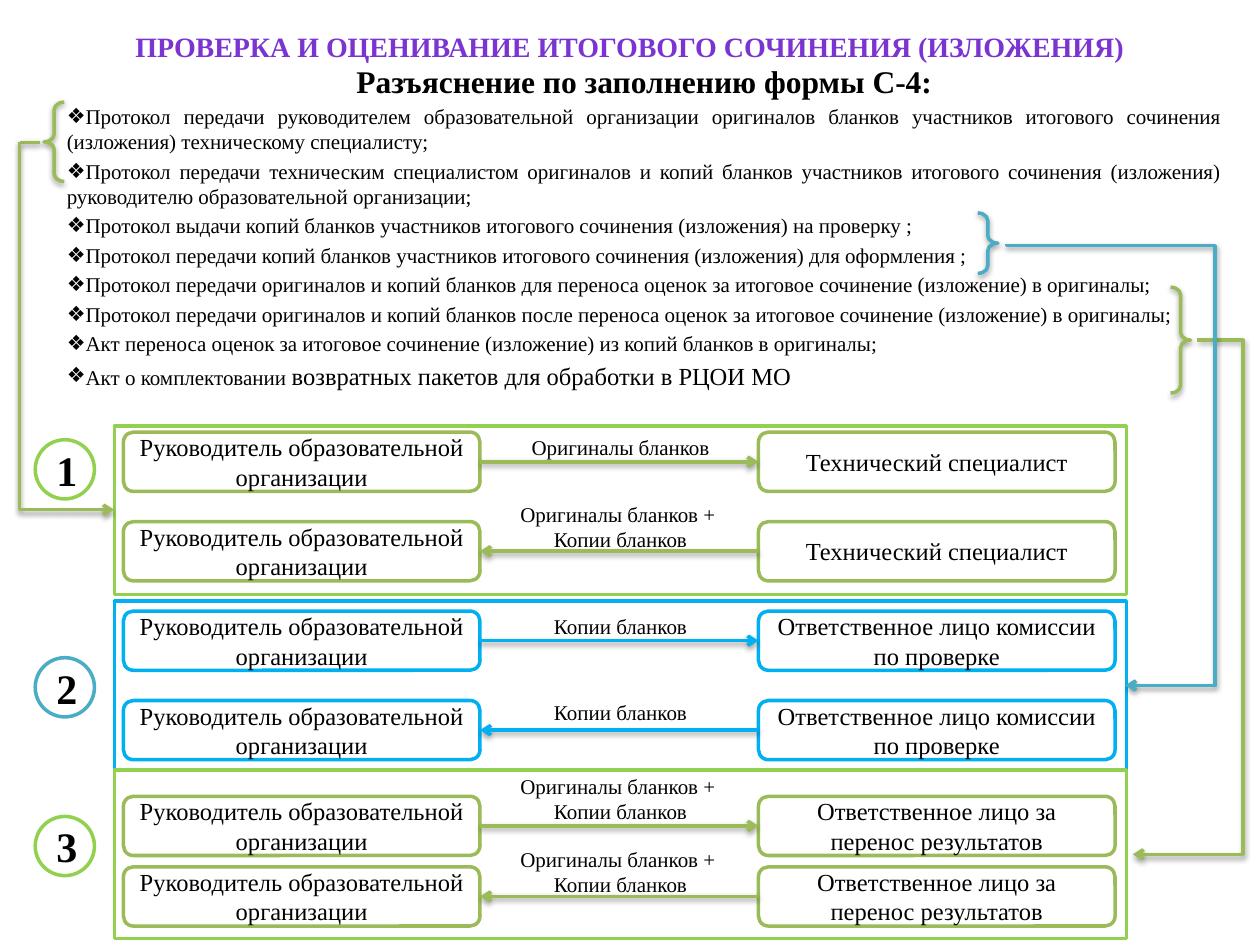
from lxml import etree
from pptx import Presentation
from pptx.dml.color import RGBColor
from pptx.enum.shapes import MSO_CONNECTOR, MSO_SHAPE
from pptx.enum.text import MSO_ANCHOR, MSO_AUTO_SIZE, PP_ALIGN
from pptx.oxml import parse_xml
from pptx.oxml.ns import nsdecls, qn
from pptx.util import Inches, Pt

ROUND, RECT, OVAL = MSO_SHAPE.ROUNDED_RECTANGLE, MSO_SHAPE.RECTANGLE, MSO_SHAPE.OVAL
BRACE = MSO_SHAPE.RIGHT_BRACE
LINE, ELBOW = MSO_CONNECTOR.STRAIGHT, MSO_CONNECTOR.ELBOW
CENTER, FULL = PP_ALIGN.CENTER, PP_ALIGN.JUSTIFY
MIDDLE, TOP = MSO_ANCHOR.MIDDLE, MSO_ANCHOR.TOP
FIXED = MSO_AUTO_SIZE.NONE
FONT = "Times New Roman"
HUES = {
    "black": "000000", "white": "FFFFFF", "title": "7B34D2", "olive": "9BBB59",
    "lime": "92D050", "sky": "00B0F0", "teal": "4BACC6",
}
RGB = {name: RGBColor.from_string(code) for name, code in HUES.items()}

deck = Presentation()
deck.slide_width, deck.slide_height = Inches(10), Inches(7.5)
CELL = deck.slide_width / 100
slide = deck.slides.add_slide(deck.slide_layouts[1])
shapes = slide.shapes


def at(*cells):
    return [round(n * CELL) for n in cells]


def ink(item, hue, cast=False, head=False):
    item.line.color.rgb = RGB[hue]
    item.line.width = Pt(2)
    props = item.element.spPr
    if head:
        etree.SubElement(props.find(qn("a:ln")), qn("a:tailEnd"), type="arrow")
    if cast:
        props.append(parse_xml(
            f'<a:effectLst {nsdecls("a")}><a:outerShdw blurRad="40000" dist="20000" '
            'dir="5400000" rotWithShape="0"><a:srgbClr val="000000">'
            '<a:alpha val="38000"/></a:srgbClr></a:outerShdw></a:effectLst>'))
    else:
        item.shadow.inherit = False


title = shapes.title
title.left, title.top, title.width, title.height = at(5, 0, 90, 6)
title.text_frame.text = "ПРОВЕРКА И ОЦЕНИВАНИЕ ИТОГОВОГО СОЧИНЕНИЯ (ИЗЛОЖЕНИЯ)"
title.text_frame.auto_size = FIXED
title.text_frame.vertical_anchor = MIDDLE
para = title.text_frame.paragraphs[0]
para.alignment, para.line_spacing = CENTER, 1.5
para.font.name, para.font.size, para.font.bold = FONT, Pt(16), True
para.font.color.rgb = RGB["title"]

body = slide.placeholders[1]
body.left, body.top, body.width, body.height = at(4.3, 4.4, 93.7, 24.2)
frame = body.text_frame
frame.text = "\n".join([
    "Разъяснение по заполнению формы С-4:",
    "Протокол передачи руководителем образовательной организации оригиналов бланков участников итогового сочинения (изложения) техническому специалисту;",
    "Протокол передачи техническим специалистом оригиналов и копий бланков участников итогового сочинения (изложения) руководителю образовательной организации;",
    "Протокол выдачи копий бланков участников итогового сочинения (изложения) на проверку ;",
    "Протокол передачи копий бланков участников итогового сочинения (изложения) для оформления ;",
    "Протокол передачи оригиналов и копий бланков для переноса оценок за итоговое сочинение (изложение) в оригиналы;",
    "Протокол передачи оригиналов и копий бланков после переноса оценок за итоговое сочинение (изложение) в оригиналы;",
    "Акт переноса оценок за итоговое сочинение (изложение) из копий бланков в оригиналы;",
    "Акт о комплектовании ",
])
frame.auto_size, frame.vertical_anchor = FIXED, TOP
for i, para in enumerate(frame.paragraphs):
    props = para._p.get_or_add_pPr()
    props.set("marL", "0")
    props.set("indent", "0")
    if i == 0:
        para.space_before = Pt(0)
        etree.SubElement(props, qn("a:buNone"))
    else:
        etree.SubElement(props, qn("a:buChar"), char="❖")
    para.alignment = FULL if i else CENTER
    para.font.name, para.font.size, para.font.bold = FONT, Pt(12 if i else 18), i == 0
    para.font.color.rgb = RGB["black"]
tail = frame.paragraphs[-1].add_run()
tail.text = "возвратных пакетов для обработки в РЦОИ МО"
tail.font.size = Pt(14)

HEAD = "Руководитель образовательной организации"
TECH = "Технический специалист"
CHECK = "Ответственное лицо комиссии по проверке"
MOVE = "Ответственное лицо за перенос результатов"
ORIG, COPY = "Оригиналы бланков", "Копии бланков"
BOTH = f"{ORIG} + \n{COPY}"
LEFT, RIGHT, WIDE, HIGH = 9.8, 60.2, 28.3, 4.7

panels = [
    (33.8, "lime", "olive", "lime", 34.9, TECH, [(34.3, 34, ORIG), (41.4, 39.3, BOTH)]),
    (47.7, "sky", "sky", "teal", 52.2, CHECK, [(48.5, 48.2, COPY), (55.6, 55, COPY)]),
    (61.1, "lime", "olive", "lime", 64.8, MOVE, [(63.2, 60.9, BOTH), (68.8, 66.7, BOTH)]),
]
texts = []
for num, (top, edge, hue, ring, spot, role, rows) in enumerate(panels, 1):
    panel = shapes.add_shape(RECT, *at(9.1, top, 80.3, 13.4))
    panel.fill.background()
    ink(panel, edge)
    badge = shapes.add_shape(OVAL, *at(2.8, spot, HIGH, HIGH))
    badge.fill.background()
    ink(badge, ring)
    texts.append((badge, str(num), 24, MIDDLE))
    for back, (y, high, note) in enumerate(rows):
        for x, name in ((LEFT, HEAD), (RIGHT, role)):
            box = shapes.add_shape(ROUND, *at(x, y, WIDE, HIGH))
            box.fill.solid()
            box.fill.fore_color.rgb = RGB["white"]
            ink(box, hue)
            texts.append((box, name, 14, MIDDLE))
        ends = [LEFT + WIDE, RIGHT]
        if back:
            ends.reverse()
        mid = y + HIGH / 2
        ink(shapes.add_connector(LINE, *at(ends[0], mid, ends[1], mid)), hue, True, True)
        label = shapes.add_textbox(*at(39.8, high, 18.9, 5 if note == BOTH else 3))
        texts.append((label, note, 12, TOP))

for item, words, size, anchor in texts:
    frame = item.text_frame
    frame.text, frame.word_wrap, frame.vertical_anchor = words, True, anchor
    for para in frame.paragraphs:
        para.alignment = CENTER
        para.font.name, para.font.size, para.font.bold = FONT, Pt(size), size == 24
        para.font.color.rgb = RGB["black"]

braces = [
    (3.5, 8.1, 6.3, 180, "olive"),
    (77.6, 16.9, 4.8, 0, "teal"),
    (92.9, 22.8, 8.4, 0, "olive"),
]
for x, y, high, turn, hue in braces:
    brace = shapes.add_shape(BRACE, *at(x, y, 1.6, high))
    brace.rotation = turn
    brace.adjustments[0], brace.adjustments[1] = 0.38, 0.5
    brace.fill.background()
    ink(brace, hue, True)

ink(shapes.add_connector(LINE, *at(1.6, 11.3, 3.2, 11.3)), "olive", True)
bends = [
    (-9.3, 22.1, 29.2, 7.5, 270, "flipH", 2, [], "olive"),
    (89.9, 27, 5.1, 40.8, 180, "flipV", 3, [-71400], "olive"),
    (67.1, 32.2, 35, 9.4, 270, "flipH", 4, [300, 176000], "teal"),
]
for x, y, wide, high, turn, flip, kind, knees, hue in bends:
    bend = shapes.add_connector(ELBOW, *at(x, y, x + wide, y + high))
    props = bend.element.spPr
    form = props.find(qn("a:xfrm"))
    form.set("rot", str(turn * 60000))
    form.set(flip, "1")
    geom = props.find(qn("a:prstGeom"))
    geom.set("prst", f"bentConnector{kind}")
    guides = geom.find(qn("a:avLst"))
    for n, knee in enumerate(knees, 1):
        etree.SubElement(guides, qn("a:gd"), name=f"adj{n}" if kind > 3 else "adj1", fmla=f"val {knee}")
    ink(bend, hue, True, True)

deck.save("out.pptx")
